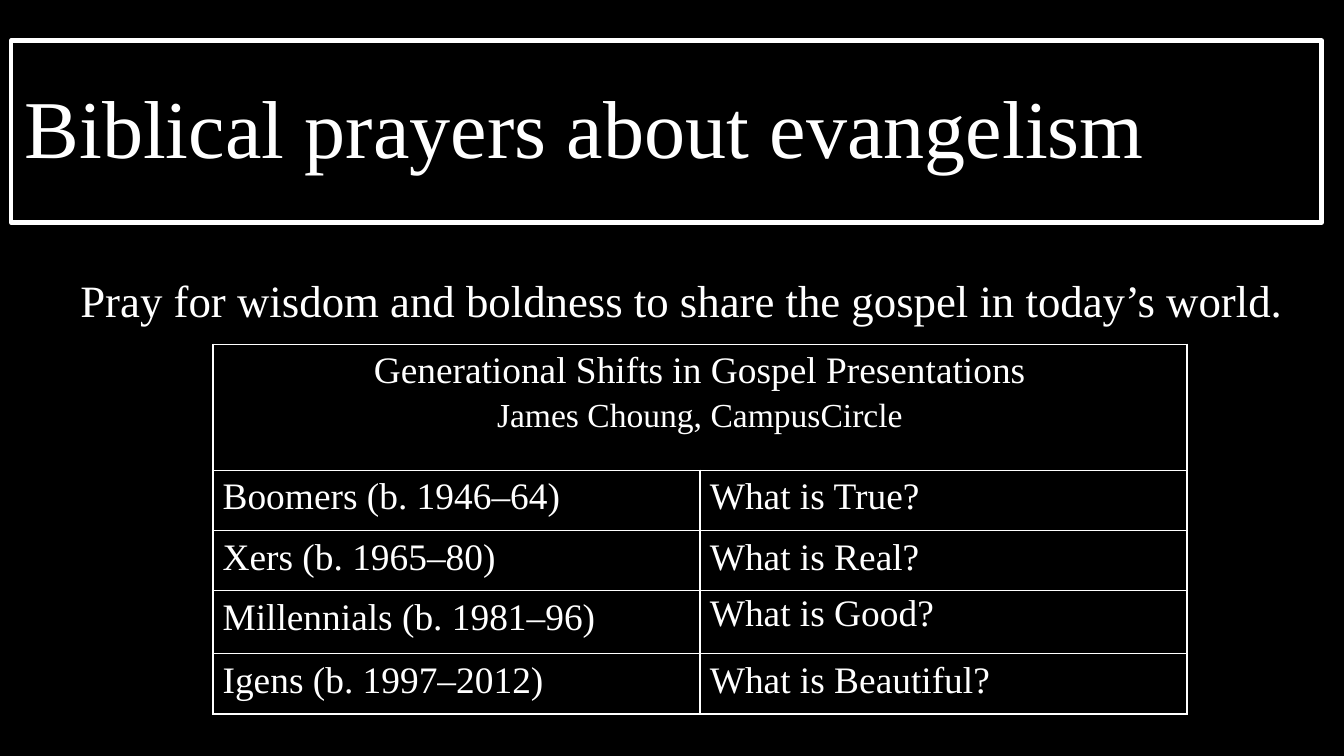
from lxml import etree
from pptx import Presentation
from pptx import util as u
from pptx.dml.color import RGBColor
from pptx.enum import text
from pptx.oxml import ns

PX = 9525  # EMU per px, 96 px to the inch
COLORS = {"back": "000000", "ink": "FFFFFF"}
FONT = "Times New Roman"
COLUMNS = [348, 348]
ROWS = [90, 43, 43, 45, 43]
HEADING = [("Generational Shifts in Gospel Presentations", 20),
           ("James Choung, CampusCircle", 18)]
GENERATIONS = [
    ("Boomers (b. 1946–64)", "What is True?"),
    ("Xers (b. 1965–80)", "What is Real?"),
    ("Millennials (b. 1981–96)", "What is Good?"),
    ("Igens (b. 1997–2012)", "What is Beautiful?"),
]


def px(*lengths):
    return [u.Emu(length * PX) for length in lengths]


def color(name):
    return RGBColor.from_string(COLORS[name])


def write(para, words, size, spacing=1.0, align=text.PP_ALIGN.LEFT):
    para.text = words
    para.alignment = align
    para.line_spacing = spacing
    para.font.size = u.Pt(size)
    para.font.name = FONT
    para.font.color.rgb = color("ink")


def add_title(page, words):
    box = page.shapes.title
    box.left, box.top, box.width, box.height = px(8, 29, 936, 130)
    box.line.color.rgb = color("ink")
    box.line.width = u.Pt(2.25)
    box.text_frame.vertical_anchor = text.MSO_ANCHOR.MIDDLE
    write(box.text_frame.paragraphs[0], words, 44, 0.9)


def add_text(page, words):
    frame = page.shapes.add_textbox(*px(48, 190, 912, 87)).text_frame
    frame.word_wrap = True
    write(frame.paragraphs[0], words, 24)


def format_cell(cell):
    cell.margin_left, cell.margin_right = px(7, 7)
    cell.margin_top = cell.margin_bottom = 0
    # Borders must come before the fill in the cell properties
    properties = cell._tc.get_or_add_tcPr()
    for side in ("a:lnL", "a:lnR", "a:lnT", "a:lnB"):
        line = etree.SubElement(properties, ns.qn(side), w=str(u.Pt(1)))
        fill = etree.SubElement(line, ns.qn("a:solidFill"))
        etree.SubElement(fill, ns.qn("a:srgbClr"), val=COLORS["ink"])
    cell.fill.background()


def add_table(page):
    frame = page.shapes.add_table(len(ROWS), len(COLUMNS),
                                  *px(152, 246, sum(COLUMNS), sum(ROWS)))
    table = frame.table
    for column, width in zip(table.columns, px(*COLUMNS)):
        column.width = width
    for row, height in zip(table.rows, px(*ROWS)):
        row.height = height
    for cell in table.iter_cells():
        format_cell(cell)

    # Heading across both columns
    heading = table.cell(0, 0)
    heading.merge(table.cell(0, 1))
    heading.text_frame.add_paragraph()
    for para, (words, size) in zip(heading.text_frame.paragraphs, HEADING):
        write(para, words, size, 1.15, text.PP_ALIGN.CENTER)
    heading.text_frame.paragraphs[-1].space_after = u.Pt(10)

    # One row per generation
    for row, answers in enumerate(GENERATIONS, 1):
        for column, words in enumerate(answers):
            para = table.cell(row, column).text_frame.paragraphs[0]
            tight = words == "What is Good?"
            write(para, words, 20, 1.07 if tight else 1.15)


def main():
    deck = Presentation()
    deck.slide_width, deck.slide_height = px(960, 540)
    page = deck.slides.add_slide(deck.slide_layouts[5])
    page.background.fill.solid()
    page.background.fill.fore_color.rgb = color("back")
    add_title(page, "Biblical prayers about evangelism")
    add_text(page, "Pray for wisdom and boldness to share the gospel in today’s world.")
    add_table(page)
    deck.save("out.pptx")


if __name__ == "__main__":
    main()
